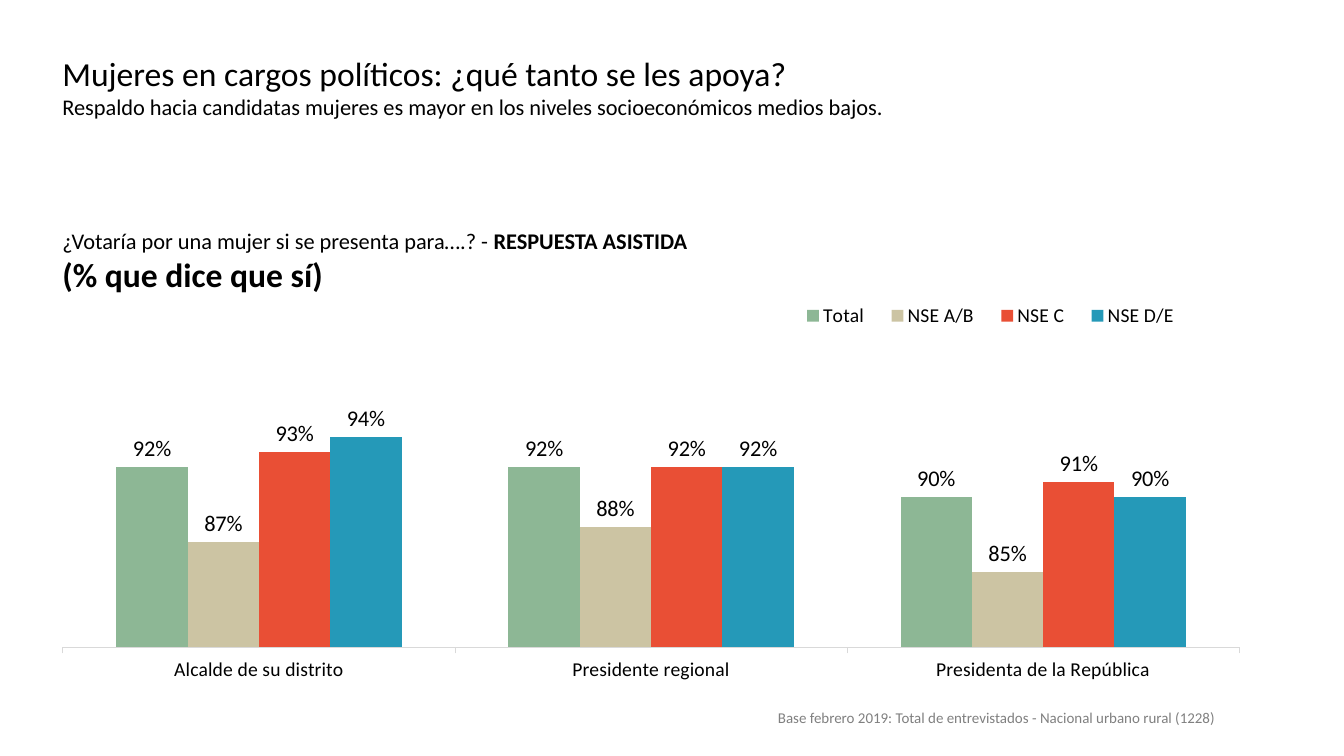
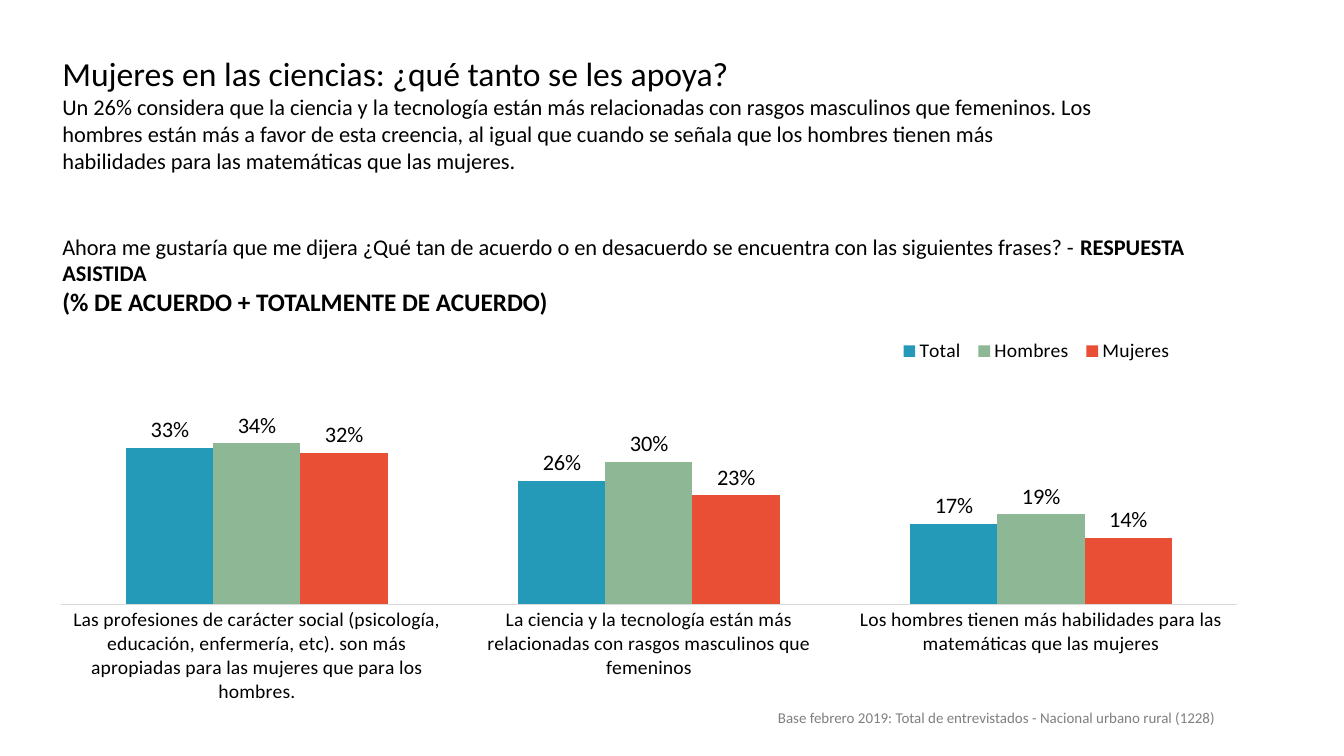
from pptx import Presentation
from pptx.chart.data import CategoryChartData
from pptx.dml.color import RGBColor
from pptx.enum.chart import XL_CHART_TYPE as ChartType
from pptx.enum.chart import XL_LABEL_POSITION as LabelPosition
from pptx.enum.chart import XL_LEGEND_POSITION as LegendPosition
from pptx.enum.chart import XL_TICK_MARK as TickMark
from pptx.enum.text import PP_ALIGN as Align
from pptx.oxml import parse_xml
from pptx.oxml.ns import nsdecls, qn
from pptx.util import Pt

BLACK = RGBColor(0x00, 0x00, 0x00)
GREY = RGBColor(0x80, 0x80, 0x80)
AXIS_GREY = RGBColor(0xD9, 0xD9, 0xD9)
GREEN = RGBColor(0x8D, 0xB7, 0x95)
SAND = RGBColor(0xCC, 0xC4, 0xA3)
RED = RGBColor(0xE9, 0x4F, 0x35)
BLUE = RGBColor(0x25, 0x99, 0xB8)
FONT = "Calibri"
LEFT = 37.44
CHART_WIDTH, CHART_HEIGHT = 858.24, 319.68
PROMPT = "RESPUESTA ASISTIDA"
FOOTER = "Base febrero 2019: Total de entrevistados - Nacional urbano rural (1228)"


def style_font(font, size, color=BLACK, bold=False):
    font.name = FONT
    font.size = Pt(size)
    font.color.rgb = color
    font.bold = bold


def add_text(page, left, top, width, height, lines):
    box = page.shapes.add_textbox(Pt(left), Pt(top), Pt(width), Pt(height))
    frame = box.text_frame
    frame.word_wrap = True
    for index, line in enumerate(lines):
        para = frame.paragraphs[0] if index == 0 else frame.add_paragraph()
        for text, *style in line:
            span = para.add_run()
            span.text = text
            style_font(span.font, *style)
    return frame


def add_title(page, title, subtitle, width):
    add_text(page, LEFT, 34.56, width, 96.5, [[(title, 24)], [(subtitle, 16)]])


def add_question(page, top, question, measure, measure_size):
    add_text(page, LEFT, top, 816.5, 55.5, [
        [(question, 16), (PROMPT, 16, BLACK, True)],
        [(measure, measure_size, BLACK, True)],
    ])


def add_footer(page):
    frame = add_text(page, 548.64, 504, 405, 18.72, [[(FOOTER, 10.7, GREY)]])
    para = frame.paragraphs[0]
    para.alignment = Align.JUSTIFY
    para.line_spacing = 0.9


def set_layout(parent, position, bounds, inner=False):
    for old in parent.findall(qn("c:layout")):
        parent.remove(old)
    target = '<c:layoutTarget val="inner"/>' if inner else ""
    modes = "".join(f'<c:{axis}Mode val="edge"/>' for axis in "xy")
    sizes = "".join(f'<c:{side} val="{value}"/>' for side, value in zip("xywh", bounds))
    parent.insert(position, parse_xml(
        f'<c:layout {nsdecls("c")}><c:manualLayout>{target}{modes}{sizes}'
        "</c:manualLayout></c:layout>"))


def add_column_chart(page, left, top, categories, series, scale, tick, plot_bounds, legend_bounds):
    data = CategoryChartData(number_format="0%")
    data.categories = categories
    for name, color, values in series:
        data.add_series(name, values)
    chart = page.shapes.add_chart(
        ChartType.COLUMN_CLUSTERED, Pt(left), Pt(top),
        Pt(CHART_WIDTH), Pt(CHART_HEIGHT), data).chart
    chart.has_title = False
    style_font(chart.font, 14)

    chart.has_legend = True
    chart.legend.position = LegendPosition.TOP
    chart.legend.include_in_layout = False
    style_font(chart.legend.font, 14)

    category_axis = chart.category_axis
    category_axis.major_tick_mark = tick
    category_axis.format.line.color.rgb = AXIS_GREY
    category_axis.format.line.width = Pt(0.75)
    style_font(category_axis.tick_labels.font, 14)

    value_axis = chart.value_axis
    value_axis.minimum_scale, value_axis.maximum_scale = scale
    value_axis.has_major_gridlines = False
    value_axis.visible = False

    plot = chart.plots[0]
    plot.gap_width = 150
    plot.overlap = 0
    plot.vary_by_categories = False
    plot.has_data_labels = True
    labels = plot.data_labels
    labels.show_value = True
    labels.number_format = "0%"
    labels.number_format_is_linked = False
    labels.position = LabelPosition.OUTSIDE_END
    style_font(labels.font, 16)
    for columns, (name, color, values) in zip(plot.series, series):
        columns.format.fill.solid()
        columns.format.fill.fore_color.rgb = color

    set_layout(chart.element.find(".//" + qn("c:plotArea")), 0, plot_bounds, inner=True)
    set_layout(chart.element.find(".//" + qn("c:legend")), 1, legend_bounds)


def build_politics(page):
    add_footer(page)
    add_title(
        page, "Mujeres en cargos políticos: ¿qué tanto se les apoya?",
        "Respaldo hacia candidatas mujeres es mayor en los niveles socioeconómicos medios bajos.",
        766.8)
    add_column_chart(
        page, 29.5, 208,
        ["Alcalde de su distrito", "Presidente regional", "Presidenta de la República"],
        [
            ("Total", GREEN, (0.92, 0.92, 0.90)),
            ("NSE A/B", SAND, (0.87, 0.88, 0.85)),
            ("NSE C", RED, (0.93, 0.92, 0.91)),
            ("NSE D/E", BLUE, (0.94, 0.92, 0.90)),
        ],
        (0.8, 0.96), TickMark.OUTSIDE,
        (0.018, 0.259, 0.979, 0.537), (0.62, 0.02, 0.34, 0.07))
    add_question(
        page, 158.4, "¿Votaría por una mujer si se presenta para….? - ",
        "(% que dice que sí)", 24)


def build_science(page):
    add_footer(page)
    add_question(
        page, 162.72,
        "Ahora me gustaría que me dijera ¿Qué tan de acuerdo o en desacuerdo "
        "se encuentra con las siguientes frases? - ",
        "(% DE ACUERDO + TOTALMENTE DE ACUERDO)", 18)
    add_title(
        page, "Mujeres en las ciencias: ¿qué tanto se les apoya?",
        "Un 26% considera que la ciencia y la tecnología están más relacionadas con rasgos "
        "masculinos que femeninos. Los hombres están más a favor de esta creencia, al igual "
        "que cuando se señala que los hombres tienen más habilidades para las matemáticas "
        "que las mujeres.",
        750.24)
    add_column_chart(
        page, 28, 182.9,
        [
            "Las profesiones de carácter social (psicología, educación, enfermería, etc). "
            "son más apropiadas para las mujeres que para los hombres.",
            "La ciencia y la tecnología están más relacionadas con rasgos masculinos que femeninos",
            "Los hombres tienen más habilidades para las matemáticas que las mujeres",
        ],
        [
            ("Total", BLUE, (0.33, 0.26, 0.17)),
            ("Hombres", GREEN, (0.34, 0.30, 0.19)),
            ("Mujeres", RED, (0.32, 0.23, 0.14)),
        ],
        (0, 0.4), TickMark.NONE,
        (0.018, 0.359, 0.979, 0.428), (0.71, 0.18, 0.24, 0.07))


def main():
    deck = Presentation()
    deck.slide_width, deck.slide_height = Pt(960), Pt(540)
    for build in (build_politics, build_science):
        build(deck.slides.add_slide(deck.slide_layouts[6]))
    deck.save("out.pptx")


if __name__ == "__main__":
    main()
